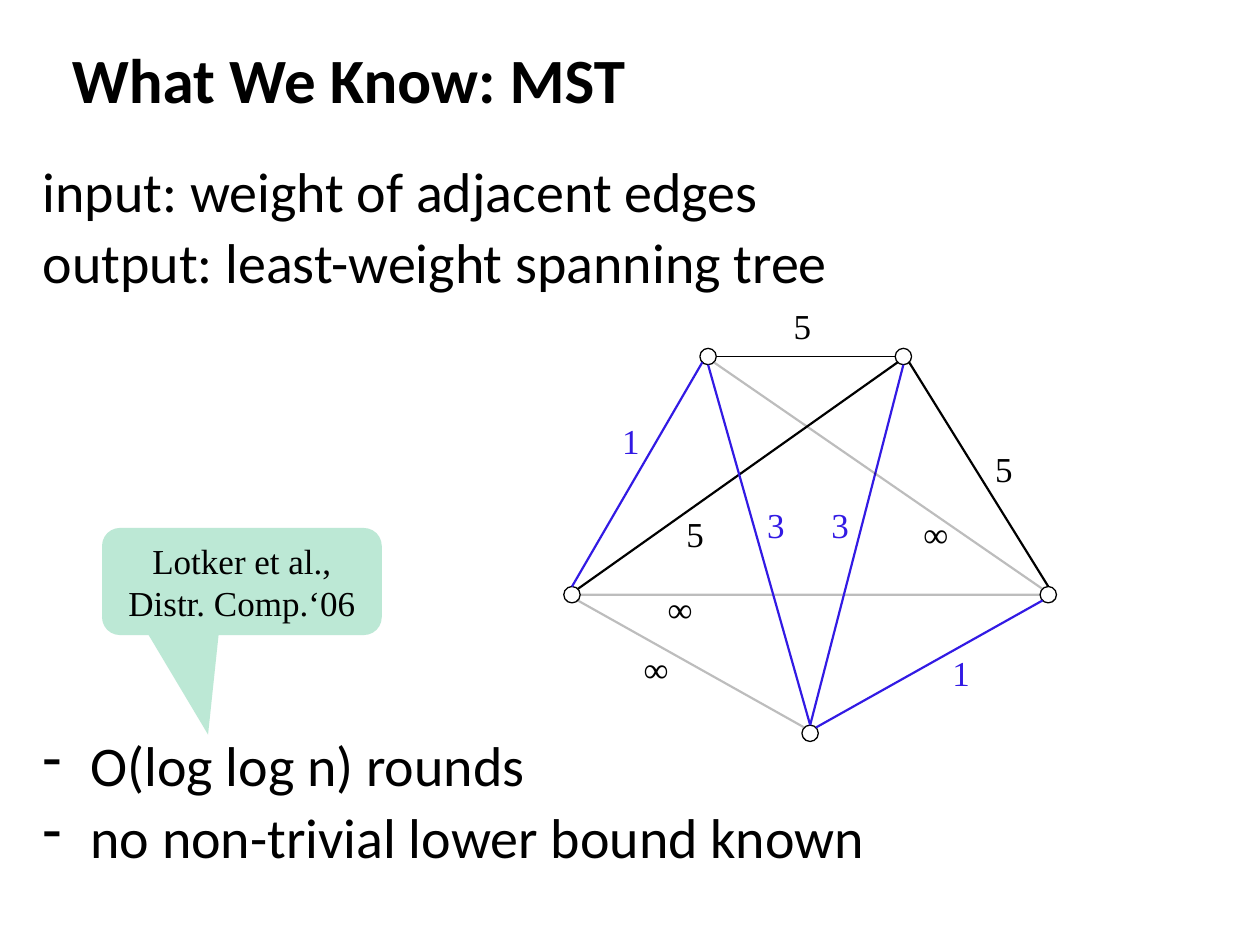
"""Build a slide on what is known about the minimum spanning tree problem."""
from math import sqrt

from lxml.etree import SubElement
from pptx import Presentation
from pptx.dml.color import RGBColor
from pptx.enum.shapes import MSO_CONNECTOR as CXN, MSO_SHAPE as SHAPE
from pptx.enum.text import MSO_ANCHOR as ANCHOR, PP_ALIGN as ALIGN
from pptx.oxml.ns import qn
from pptx.util import Inches, Pt

COLORS = {"ink": "000000", "tree": "321AE4", "callout": "AAE2CA"}
RADIUS = 0.065
DIAG = RADIUS / sqrt(2)
SITES = {
    "n": (0, -RADIUS), "s": (0, RADIUS), "w": (-RADIUS, 0), "e": (RADIUS, 0),
    "nw": (-DIAG, -DIAG), "ne": (DIAG, -DIAG),
    "sw": (-DIAG, DIAG), "se": (DIAG, DIAG),
}
NODES = {
    "A": (5.62, 2.83), "B": (7.17, 2.83), "C": (4.54, 4.72),
    "D": (8.32, 4.72), "E": (6.43, 5.82),
}
EDGES = [
    ("A", "e", "B", "w", "ink", 0.75, 100),
    ("B", "se", "D", "n", "ink", 1.25, 100),
    ("D", "sw", "E", "ne", "tree", 1.25, 100),
    ("C", "n", "A", "sw", "tree", 1.25, 100),
    ("C", "ne", "B", "sw", "ink", 1.25, 100),
    ("C", "e", "D", "w", "ink", 1.25, 25),
    ("C", "se", "E", "nw", "ink", 1.25, 25),
    ("E", "n", "B", "s", "tree", 1.25, 100),
    ("E", "n", "A", "s", "tree", 1.25, 100),
    ("D", "nw", "A", "se", "ink", 1.25, 25),
]
WEIGHTS = [
    ("∞", 5.01, 5.09, "ink"), ("∞", 5.2, 4.61, "ink"), ("∞", 7.23, 4.02, "ink"),
    ("1", 7.46, 5.12, "tree"), ("1", 4.84, 3.28, "tree"),
    ("5", 5.35, 4.02, "ink"), ("3", 6.5, 3.95, "tree"),
    ("3", 5.99, 3.95, "tree"), ("5", 7.8, 3.5, "ink"), ("5", 6.2, 2.37, "ink"),
]


class Deck:
    """Hold the style and the current slide."""

    heading_font = "Calibri"
    label_font = "Times New Roman"

    def __init__(self, prs):
        self.s = prs.slides.add_slide(prs.slide_layouts[5])

    def color(self, name):
        return RGBColor.from_string(COLORS[name])

    def fade(self, fill, percent):
        clr = fill._xPr.find(qn("a:solidFill"))[0]
        SubElement(clr, qn("a:alpha"), val=str(percent * 1000))

    def run(self, p, text, size, font, color="ink", bold=False):
        r = p.add_run()
        r.text = text
        r.font.size, r.font.name, r.font.bold = Pt(size), font, bold
        r.font.color.rgb = self.color(color)

    def title(self, text, *box):
        sp = self.s.shapes.title
        sp.left, sp.top, sp.width, sp.height = map(Inches, box)
        tf = sp.text_frame
        tf.vertical_anchor = ANCHOR.MIDDLE
        p = tf.paragraphs[0]
        p.alignment = ALIGN.LEFT
        self.run(p, text, 36, self.heading_font, bold=True)

    def body(self, lines, *box, bullet=None):
        tf = self.s.shapes.add_textbox(*map(Inches, box)).text_frame
        tf.word_wrap = True
        for i, line in enumerate(lines):
            p = tf.add_paragraph() if i else tf.paragraphs[0]
            p.line_spacing, p.space_before = 0.9, Pt(6.4)
            pPr = p._p.get_or_add_pPr()
            pPr.set("marL", str(Inches(0.38)))
            pPr.set("indent", str(-Inches(0.38)))
            if bullet:
                SubElement(pPr, qn("a:buChar"), char=bullet)
            else:
                SubElement(pPr, qn("a:buNone"))
            self.run(p, line, 32, self.heading_font)

    def node(self, x, y):
        box = (x - RADIUS, y - RADIUS, 2 * RADIUS, 2 * RADIUS)
        sp = self.s.shapes.add_shape(SHAPE.OVAL, *map(Inches, box))
        sp.shadow.inherit = False
        sp.fill.background()
        sp.line.color.rgb = self.color("ink")
        sp.line.width = Pt(0.75)

    def edge(self, start, start_site, end, end_site, color, width, opacity):
        ends = [
            Inches(c + d)
            for name, site in ((start, start_site), (end, end_site))
            for c, d in zip(NODES[name], SITES[site])
        ]
        cx = self.s.shapes.add_connector(CXN.STRAIGHT, *ends)
        cx.line.color.rgb = self.color(color)
        cx.line.width = Pt(width)
        if opacity < 100:
            self.fade(cx.line.fill, opacity)
        SubElement(cx._element.spPr, qn("a:effectLst"))

    def weight(self, text, x, y, color):
        width = 0.4 if text == "∞" else 0.34
        box = map(Inches, (x, y, width, 0.44))
        tf = self.s.shapes.add_textbox(*box).text_frame
        tf.word_wrap = False
        self.run(tf.paragraphs[0], text, 20, self.label_font, color)

    def callout(self, lines, *box):
        sp = self.s.shapes.add_shape(
            SHAPE.ROUNDED_RECTANGULAR_CALLOUT, *map(Inches, box))
        for i, value in enumerate((-0.121, 1.43, 0.167)):
            sp.adjustments[i] = value
        sp.shadow.inherit = False
        sp.fill.solid()
        sp.fill.fore_color.rgb = self.color("callout")
        self.fade(sp.fill, 79)
        sp.line.fill.background()
        tf = sp.text_frame
        tf.word_wrap = True
        tf.vertical_anchor = ANCHOR.MIDDLE
        tf.margin_left = tf.margin_right = Inches(0.09)
        for i, line in enumerate(lines):
            p = tf.add_paragraph() if i else tf.paragraphs[0]
            p.alignment = ALIGN.CENTER
            self.run(p, line, 20, self.label_font)


def main():
    prs = Presentation()
    prs.slide_width, prs.slide_height = Inches(10), Inches(7.5)
    deck = Deck(prs)
    deck.title("What We Know: MST", 0.47, 0.25, 9.19, 0.75)
    deck.body(["input: weight of adjacent edges",
               "output: least-weight spanning tree"], 0.24, 1.25, 9.43, 1.25)
    deck.body(["O(log log n) rounds", "no non-trivial lower bound known"],
              0.24, 5.81, 9.43, 1.29, bullet="-")
    for center in NODES.values():
        deck.node(*center)
    for edge in EDGES:
        deck.edge(*edge)
    for weight in WEIGHTS:
        deck.weight(*weight)
    deck.callout(["Lotker et al.,", "Distr. Comp.‘06"], 0.81, 4.19, 2.22, 0.85)
    prs.save("out.pptx")


if __name__ == "__main__":
    main()
